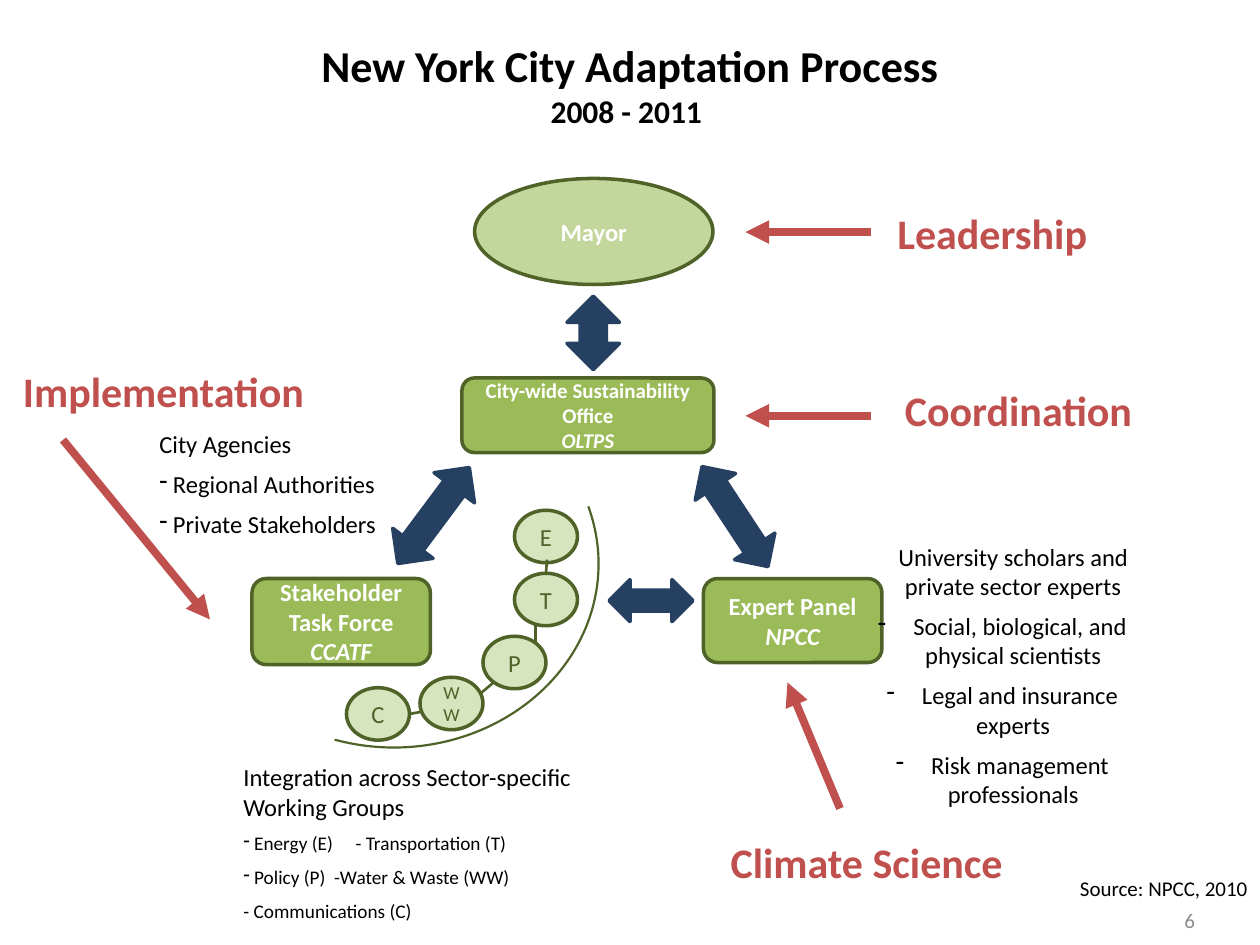
from dataclasses import dataclass

from lxml.etree import SubElement
from pptx import Presentation
from pptx.dml.color import RGBColor
from pptx.enum.shapes import MSO_CONNECTOR, MSO_SHAPE
from pptx.enum.text import MSO_ANCHOR, MSO_AUTO_SIZE, PP_ALIGN
from pptx.oxml.ns import qn
from pptx.util import Inches, Pt

COLORS = {
    "ink": "000000", "white": "FFFFFF", "grey": "8C8C8C", "red": "C0504D",
    "navy": "254061", "olive": "4F6228", "green": "9BBB59",
    "sage": "C3D69B", "pale": "D7E4BD",
}
CENTER, LEFT, RIGHT = PP_ALIGN.CENTER, PP_ALIGN.LEFT, PP_ALIGN.RIGHT
HEADING = {"size": 24, "bold": True, "color": "red"}
LABEL = {"bold": True, "color": "white"}


@dataclass
class Line:
    text: str
    style: dict
    bullet: bool = False
    tab: float = 0


class Board:
    """Draws styled elements on a slide measured in twelfths of an inch."""

    font_name = "Calibri"

    def __init__(self, slide):
        self.slide = slide

    def cells(self, *values):
        return [Inches(value / 12) for value in values]

    def color(self, name):
        return RGBColor.from_string(COLORS[name])

    def set_lines(self, frame, lines, align, after=0):
        for index, line in enumerate(lines):
            paragraph = frame.paragraphs[0] if index == 0 else frame.add_paragraph()
            properties = paragraph._p.get_or_add_pPr()
            if line.bullet:
                SubElement(properties, qn("a:buChar"), char="-")
            if line.tab:
                tabs = SubElement(properties, qn("a:tabLst"))
                SubElement(tabs, qn("a:tab"), pos=str(Inches(line.tab)), algn="l")
            paragraph.alignment = align
            paragraph.space_after = Pt(after)
            run = paragraph.add_run()
            run.text = line.text
            style = {"size": 14, "color": "ink", **line.style}
            run.font.color.rgb = self.color(style.pop("color"))
            style.update(size=Pt(style["size"]), name=self.font_name)
            for key, value in style.items():
                setattr(run.font, key, value)

    def text(self, box, lines, align=LEFT, after=0, **options):
        frame = self.slide.shapes.add_textbox(*self.cells(*box)).text_frame
        options = {"word_wrap": True, **options}
        for key, value in options.items():
            setattr(frame, key, value)
        self.set_lines(frame, lines, align, after)

    def shape(self, kind, box, fill=None, line="olive", width=2, rotation=0, lines=()):
        shape = self.slide.shapes.add_shape(kind, *self.cells(*box))
        shape.shadow.inherit = False
        shape.rotation = rotation
        if fill:
            shape.fill.solid()
            shape.fill.fore_color.rgb = self.color(fill)
        else:
            shape.fill.background()
        shape.line.color.rgb = self.color(line)
        shape.line.width = Pt(width)
        shape.text_frame.vertical_anchor = MSO_ANCHOR.MIDDLE
        self.set_lines(shape.text_frame, lines, CENTER)
        return shape

    def line(self, ends, color, width, arrow=False):
        connector = self.slide.shapes.add_connector(
            MSO_CONNECTOR.STRAIGHT, *self.cells(*ends))
        connector.line.color.rgb = self.color(color)
        connector.line.width = Pt(width)
        properties = connector._element.spPr
        if arrow:
            SubElement(properties.find(qn("a:ln")), qn("a:tailEnd"), type="triangle")
        SubElement(properties, qn("a:effectLst"))


def main():
    deck = Presentation()
    deck.slide_width, deck.slide_height = Inches(10), Inches(7.5)
    board = Board(deck.slides.add_slide(deck.slide_layouts[6]))
    middle = {"vertical_anchor": MSO_ANCHOR.MIDDLE}
    grow = {"auto_size": MSO_AUTO_SIZE.SHAPE_TO_FIT_TEXT}

    board.text((0, 3, 120, 10), [
        Line("New York City Adaptation Process", {"size": 25.2, "bold": True}),
        Line("2008 - 2011 ", {"size": 18, "bold": True}),
    ], CENTER, **middle)
    board.text((87, 85.2, 28, 4.8), [Line("6", {"size": 12, "color": "grey"})],
               RIGHT, **middle)
    board.text((100, 82.2, 20, 4.8), [Line("Source: NPCC, 2010", {"size": 12})],
               RIGHT, **middle)

    for box, body, acronym, size in (
        ((24, 55.1, 17, 8.2), "Stakeholder Task Force", "CCATF", 14),
        ((44, 36, 24, 7.1), "City-wide Sustainability Office", "OLTPS", 12),
        ((67, 55.1, 17, 8), "Expert Panel", "NPCC", 14),
    ):
        label = {**LABEL, "size": size}
        board.shape(MSO_SHAPE.ROUNDED_RECTANGLE, box, "green", lines=[
            Line(body, label), Line(acronym, {**label, "italic": True})])

    for left, top, letters, size in (
        (33, 65.5, "C", 14), (40, 64.5, "WW", 10.5), (46, 60.6, "P", 14),
        (49, 54.6, "T", 14), (49, 48.6, "E", 14),
    ):
        board.shape(MSO_SHAPE.OVAL, (left, top, 6, 5), "pale", lines=[
            Line(letter, {"size": size, "color": "olive"}) for letter in letters])

    for box, rotation in (
        ((35.6, 46.7, 11.4, 4.8), 306.7), ((64.3, 46.9, 11.4, 4.6), 56.6),
        ((58, 55.2, 8, 4), 0), ((53, 29.2, 7, 5), 270),
    ):
        board.shape(MSO_SHAPE.LEFT_RIGHT_ARROW, box, "navy", "navy", rotation=rotation)

    sector_arc = board.shape(MSO_SHAPE.ARC, (20, 34.2, 35, 39), width=1.25, rotation=90)
    sector_arc.adjustments[0], sector_arc.adjustments[1] = 152.13, 11.17
    board.shape(MSO_SHAPE.OVAL, (45.2, 17, 22.7, 10.1), "sage",
                lines=[Line("Mayor", LABEL)])

    board.text((14, 40.3, 31, 11.8), [
        Line("City Agencies", {}),
        Line(" Regional Authorities", {}, bullet=True),
        Line(" Private Stakeholders", {}, bullet=True),
    ], after=6, **grow)
    small = {"size": 11}
    board.text((22, 72, 41, 16.8), [
        Line("Integration across Sector-specific Working Groups", {}),
        Line(" Energy (E)\t- Transportation (T)", small, bullet=True, tab=0.89),
        Line(" Policy (P)\t-Water & Waste (WW)", small, bullet=True, tab=0.72),
        Line("- Communications (C)", small),
    ], after=6, **grow)
    board.text((82, 51, 29, 26.9), [
        Line("University scholars and private sector experts", {}),
        Line(" Social, biological, and physical scientists", {}, bullet=True),
        Line(" Legal and insurance experts", {}, bullet=True),
        Line(" Risk management professionals", {}, bullet=True),
    ], CENTER, after=6, **grow)

    for link in ((51, 59.3, 51, 61.2), (52.1, 53.3, 52, 54.6),
                 (47, 65, 45.7, 66.1), (40.1, 67.8, 39, 68)):
        board.line(link, "olive", 1.5)
    for pointer in ((83, 22.1, 71, 22.1), (83, 39.6, 71, 39.6),
                    (6, 41.9, 20, 59), (80, 77, 75, 65)):
        board.line(pointer, "red", 4.5, arrow=True)

    for box, role, align, wrap in (
        ((82, 19.2, 25, 6.1), "Leadership", CENTER, True),
        ((83, 36, 28, 6.1), "Coordination", CENTER, True),
        ((1, 34.2, 30.4, 6.1), "Implementation", LEFT, False),
        ((68.4, 79.1, 28.6, 6.1), "Climate Science", LEFT, False),
    ):
        board.text(box, [Line(role, HEADING)], align, word_wrap=wrap, **grow)

    deck.save("out.pptx")


if __name__ == "__main__":
    main()
